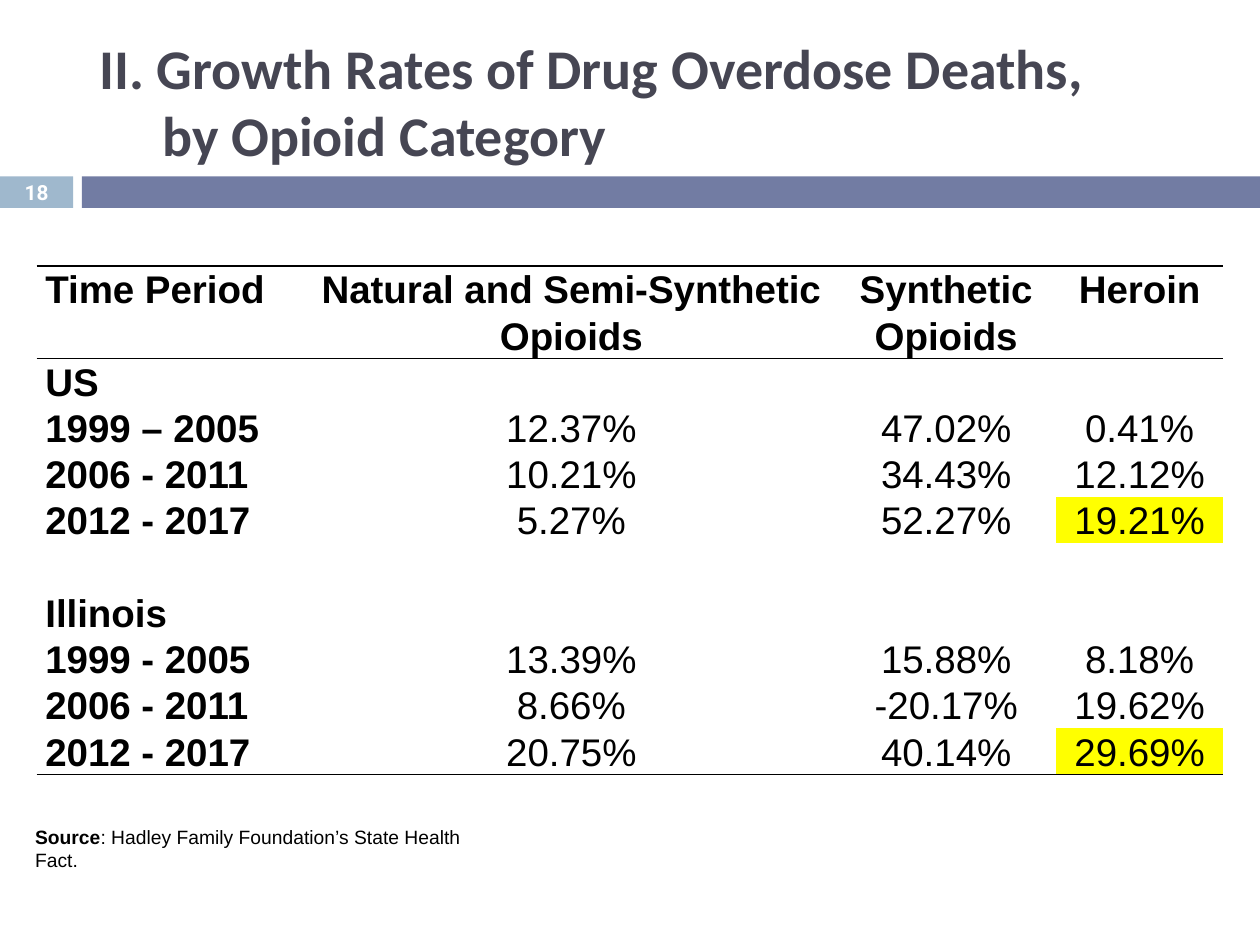
from lxml import etree
from pptx import Presentation
from pptx import util as u
from pptx.dml.color import RGBColor
from pptx.enum import shapes, text
from pptx.oxml.ns import qn

Inches, Pt = u.Inches, u.Pt
LEFT, CENTER = text.PP_ALIGN.LEFT, text.PP_ALIGN.CENTER
TOP, MIDDLE, BOTTOM = text.MSO_ANCHOR.TOP, text.MSO_ANCHOR.MIDDLE, text.MSO_ANCHOR.BOTTOM
NO_STYLE = "{2D5ABB26-0587-4C30-8999-92F81FD0307C}"

HEADINGS = ["Time Period", "Natural and Semi-Synthetic\nOpioids", "Synthetic\nOpioids", "Heroin"]
GROWTH_RATES = [
    ["US", "", "", ""],
    ["1999 – 2005", "12.37%", "47.02%", "0.41%"],
    ["2006 - 2011", "10.21%", "34.43%", "12.12%"],
    ["2012 - 2017", "5.27%", "52.27%", "19.21%"],
    ["Illinois", "", "", ""],
    ["1999 - 2005", "13.39%", "15.88%", "8.18%"],
    ["2006 - 2011", "8.66%", "-20.17%", "19.62%"],
    ["2012 - 2017", "20.75%", "40.14%", "29.69%"],
]
HIGHLIGHTS = {"19.21%", "29.69%"}
COLUMN_WIDTHS = [2.14, 4.21, 1.74, 1.33]
LINE_HEIGHT = Pt(26.4)


def color(value):
    return RGBColor.from_string(value)


def write(frame, *parts, size, font="Arial", fill="000000", align=LEFT, anchor=TOP,
          spacing=None, hanging=0):
    frame.vertical_anchor = anchor
    paragraph = frame.paragraphs[0]
    paragraph.alignment = align
    if spacing:
        paragraph.line_spacing = spacing
    if hanging:
        properties = paragraph._p.get_or_add_pPr()
        properties.set("marL", str(Inches(hanging)))
        properties.set("indent", str(-Inches(hanging)))
    for words, bold in parts:
        for index, line in enumerate(words.split("\n")):
            if index:
                paragraph.add_line_break()
            run = paragraph.add_run()
            run.text = line
            run.font.name, run.font.size, run.font.bold = font, Pt(size), bold
            run.font.color.rgb = color(fill)


def add_text(slide, box, *parts, wrap=True, **style):
    frame = slide.shapes.add_textbox(*map(Inches, box)).text_frame
    frame.word_wrap = wrap
    write(frame, *parts, **style)
    return frame


def add_bar(slide, box, fill):
    bar = slide.shapes.add_shape(shapes.MSO_SHAPE.RECTANGLE, *map(Inches, box))
    bar.shadow.inherit = False
    bar.fill.solid()
    bar.fill.fore_color.rgb = color(fill)
    bar.line.fill.background()


def add_border(cell, tags):
    properties = cell._tc.get_or_add_tcPr()
    for position, tag in enumerate(tags):
        line = etree.Element(qn(tag), w=str(Pt(1)))
        fill = etree.SubElement(line, qn("a:solidFill"))
        etree.SubElement(fill, qn("a:srgbClr"), val="000000")
        properties.insert(position, line)


def header(slide, left, top, width):
    add_text(slide, (left + 0.69, top, width - 0.84, 1.08),
             ("II. Growth Rates of Drug Overdose Deaths,\nby Opioid Category", True),
             size=32, font="Calibri", fill="464653", anchor=MIDDLE, hanging=0.5)
    number_box = (left, top + 1.14, 0.58, 0.25)
    add_bar(slide, number_box, "9FB8CD")
    add_bar(slide, (left + 0.65, top + 1.14, width - 0.65, 0.25), "727CA3")
    add_text(slide, number_box, ("18", True), size=11.9, font="Roboto",
             fill="FFFFFF", align=CENTER, anchor=MIDDLE)


def growth_table(slide, left, top, width):
    rows = [HEADINGS] + GROWTH_RATES
    heights = [LINE_HEIGHT * (2 if row[0] in ("Time Period", "Illinois") else 1) for row in rows]
    frame = slide.shapes.add_table(len(rows), len(HEADINGS), Inches(left), Inches(top),
                                   Inches(width), sum(heights))
    table = frame.table
    table.first_row = table.horz_banding = False
    table._tbl.tblPr.find(qn("a:tableStyleId")).text = NO_STYLE
    for column, column_width in zip(table.columns, COLUMN_WIDTHS):
        column.width = Inches(column_width)
    for r, row in enumerate(rows):
        table.rows[r].height = heights[r]
        for c, words in enumerate(row):
            cell = table.cell(r, c)
            cell.margin_left = cell.margin_right = Inches(0.07)
            cell.margin_top = cell.margin_bottom = 0
            if words in HIGHLIGHTS:
                cell.fill.solid()
                cell.fill.fore_color.rgb = color("FFFF00")
            else:
                cell.fill.background()
            write(cell.text_frame, (words, r == 0 or c == 0), size=22, spacing=LINE_HEIGHT,
                  align=CENTER if c else LEFT)
            cell.vertical_anchor = BOTTOM if row[0] == "Illinois" else TOP
            if r == 0:
                add_border(cell, ["a:lnT", "a:lnB"])
            elif r == len(rows) - 1:
                add_border(cell, ["a:lnB"])


def source_note(slide, left, top, width):
    note = add_text(slide, (left, top, width, 0.29), ("Source", True),
                    (": Hadley Family Foundation’s State Health Fact.", False),
                    size=11, wrap=False)
    note.auto_size = text.MSO_AUTO_SIZE.SHAPE_TO_FIT_TEXT


def main():
    deck = Presentation()
    deck.slide_width, deck.slide_height = Inches(10), Inches(7.5)
    slide = deck.slides.add_slide(deck.slide_layouts[6])
    header(slide, 0, 0.26, 10)
    growth_table(slide, 0.29, 2.11, 9.42)
    source_note(slide, 0.18, 6.5, 3.95)
    deck.save("out.pptx")


if __name__ == "__main__":
    main()
